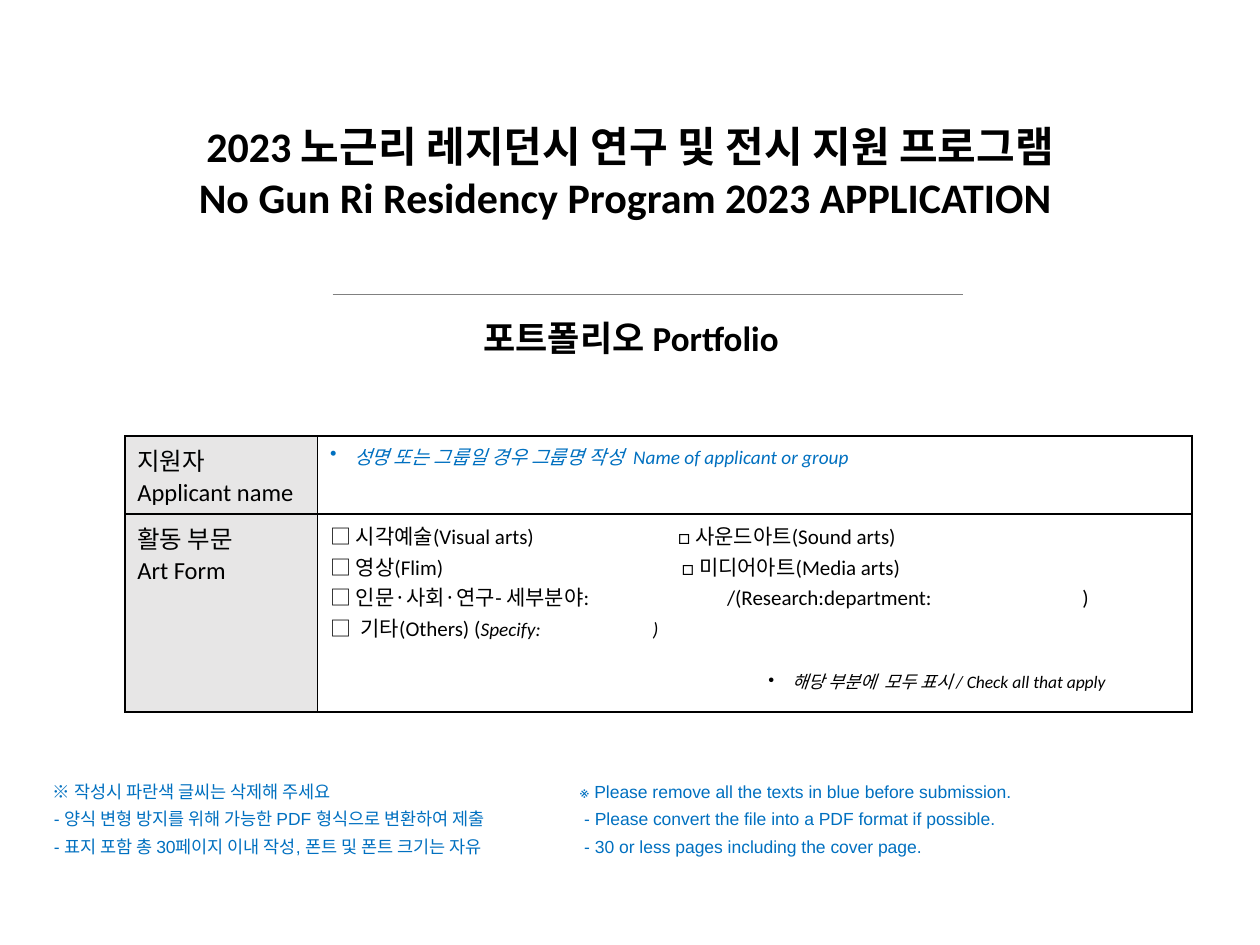
from lxml import etree
from pptx import Presentation
from pptx import util as u
from pptx.dml.color import RGBColor
from pptx.enum import shapes, text
from pptx.oxml import ns

BLACK = RGBColor(0, 0, 0)
BLUE = RGBColor(0x00, 0x70, 0xC0)
GREY = RGBColor(0x80, 0x80, 0x80)
LABEL_FILL = RGBColor(0xE7, 0xE6, 0xE6)
WHITE = RGBColor(255, 255, 255)

deck = Presentation()
deck.slide_width, deck.slide_height = u.Inches(10), u.Inches(7.5)
COL = deck.slide_width / 100
ROW = deck.slide_height / 75
slide = deck.slides.add_slide(deck.slide_layouts[0])


def place(left, top, width, height):
    return [int(n) for n in (left * COL, top * ROW, width * COL, height * ROW)]


def write(frame, lines, size, color=BLACK, face="Calibri", bold=False,
          italic=False, align=None, spacing=1.0, bullet=False, tabs=()):
    frame.word_wrap = True
    for number, line in enumerate(lines):
        paragraph = frame.paragraphs[0] if number == 0 else frame.add_paragraph()
        paragraph.alignment = align
        paragraph.line_spacing = spacing
        paragraph.space_before = u.Pt(0)
        font = paragraph.font
        font.size, font.name, font.bold, font.italic = u.Pt(size), face, bold, italic
        font.color.rgb = color
        for words, own_face, own_size, own_italic in [(line, face, size, italic)] if isinstance(line, str) else line:
            run = paragraph.add_run()
            run.text = words
            run.font.size, run.font.name = u.Pt(size if own_size is None else own_size), own_face
            run.font.bold, run.font.italic = bold, own_italic
            run.font.color.rgb = color
        props = paragraph._p.get_or_add_pPr()
        if bullet:
            props.set("marL", str(int(1.9 * COL)))
            props.set("indent", str(int(-1.9 * COL)))
            marker = etree.Element(ns.qn("a:buChar"), char="•")
            props.find(ns.qn("a:defRPr")).addprevious(marker)
        if tabs:
            stops = etree.Element(ns.qn("a:tabLst"))
            for stop in tabs[number]:
                etree.SubElement(stops, ns.qn("a:tab"), pos=str(int(stop * COL)), algn="l")
            props.find(ns.qn("a:defRPr")).addprevious(stops)


rule = slide.shapes.add_connector(
    shapes.MSO_CONNECTOR.STRAIGHT,
    *[int(n) for n in (26.4 * COL, 23.4 * ROW, 76.4 * COL, 23.4 * ROW)])
rule.line.color.rgb = GREY
rule.line.width = u.Pt(0.5)
etree.SubElement(rule._element.spPr, ns.qn("a:effectLst"))

program, portfolio = slide.placeholders
headings = [
    (program, (0, 9.1, 100, 9.1), 24,
     ["2023 노근리 레지던시 연구 및 전시 지원 프로그램",
      "No Gun Ri Residency Program 2023 APPLICATION "]),
    (portfolio, (0.4, 24.6, 100, 4.4), 20,
     [[("포트폴리오 ", "Arial", 20, False), ("Portfolio ", "Calibri", 20, False)]]),
]
for heading, area, size, lines in headings:
    heading.left, heading.top, heading.width, heading.height = place(*area)
    heading.text_frame.auto_size = text.MSO_AUTO_SIZE.NONE
    heading.text_frame.vertical_anchor = text.MSO_ANCHOR.TOP
    write(heading.text_frame, lines, size, bold=True, align=text.PP_ALIGN.CENTER)

form = slide.shapes.add_table(2, 2, *place(9.9, 34.6, 84.7, 21.6)).table
form.first_row = form.horz_banding = False
for column, width in zip(form.columns, (15.3, 69.4)):
    column.width = int(width * COL)
for row, height in zip(form.rows, (5.9, 15.7)):
    row.height = int(height * ROW)

write(form.cell(0, 0).text_frame, ["지원자", "Applicant name"], 14)
write(form.cell(0, 1).text_frame,
      ["성명 또는 그룹일 경우 그룹명 작성  Name of applicant or group"],
      11, BLUE, italic=True, bullet=True)
write(form.cell(1, 0).text_frame, ["활동 부문", "Art Form"], 14)
write(form.cell(1, 1).text_frame, [
    "□ 시각예술(Visual arts)\t□ 사운드아트(Sound arts)",
    "□ 영상(Flim)\t□ 미디어아트(Media arts)",
    [("□ 인문", "Calibri", 12, False),
     ("·사회·", "Noto Sans CJK KR", 12, False),
     ("연구- 세부분야:\t/(Research:department:\t)", "Calibri", 12, False)],
    [("□  기타(Others) (", "Calibri", 12, False),
     ("Specify:\t)", "Calibri", 11, True)],
], 12, tabs=[(27.6,), (27.9,), (31.5, 59.7), (25.6,)])

for row in form.rows:
    for cell, fill in zip(row.cells, (LABEL_FILL, WHITE)):
        cell.fill.solid()
        cell.fill.fore_color.rgb = fill
        props = cell._tc.get_or_add_tcPr()
        for position, side in enumerate(("lnL", "lnR", "lnT", "lnB")):
            border = etree.Element(ns.qn(f"a:{side}"), w=str(u.Pt(1)))
            paint = etree.SubElement(border, ns.qn("a:solidFill"))
            etree.SubElement(paint, ns.qn("a:srgbClr"), val=str(BLACK))
            props.insert(position, border)

notes = [
    ((60, 52.8, 34.7, 2.7), ["해당 부분에  모두 표시 / Check all that apply"],
     dict(italic=True, bullet=True)),
    ((2.9, 61, 47.1, 7.6),
     [" ※ 작성시 파란색 글씨는 삭제해 주세요",
      " - 양식 변형 방지를 위해 가능한 PDF 형식으로 변환하여 제출",
      " - 표지 포함 총 30페이지 이내 작성, 폰트 및 폰트 크기는 자유"],
     dict(color=BLUE, face="Arial", spacing=1.3)),
    ((45, 61, 47.1, 7.6),
     ["※ Please remove all the texts in blue before submission.",
      " - Please convert the file into a PDF format if possible.",
      " - 30 or less pages including the cover page."],
     dict(color=BLUE, face="Arial", spacing=1.3)),
]
for area, lines, style in notes:
    note = slide.shapes.add_textbox(*place(*area))
    write(note.text_frame, lines, 10, **style)

deck.save("out.pptx")
